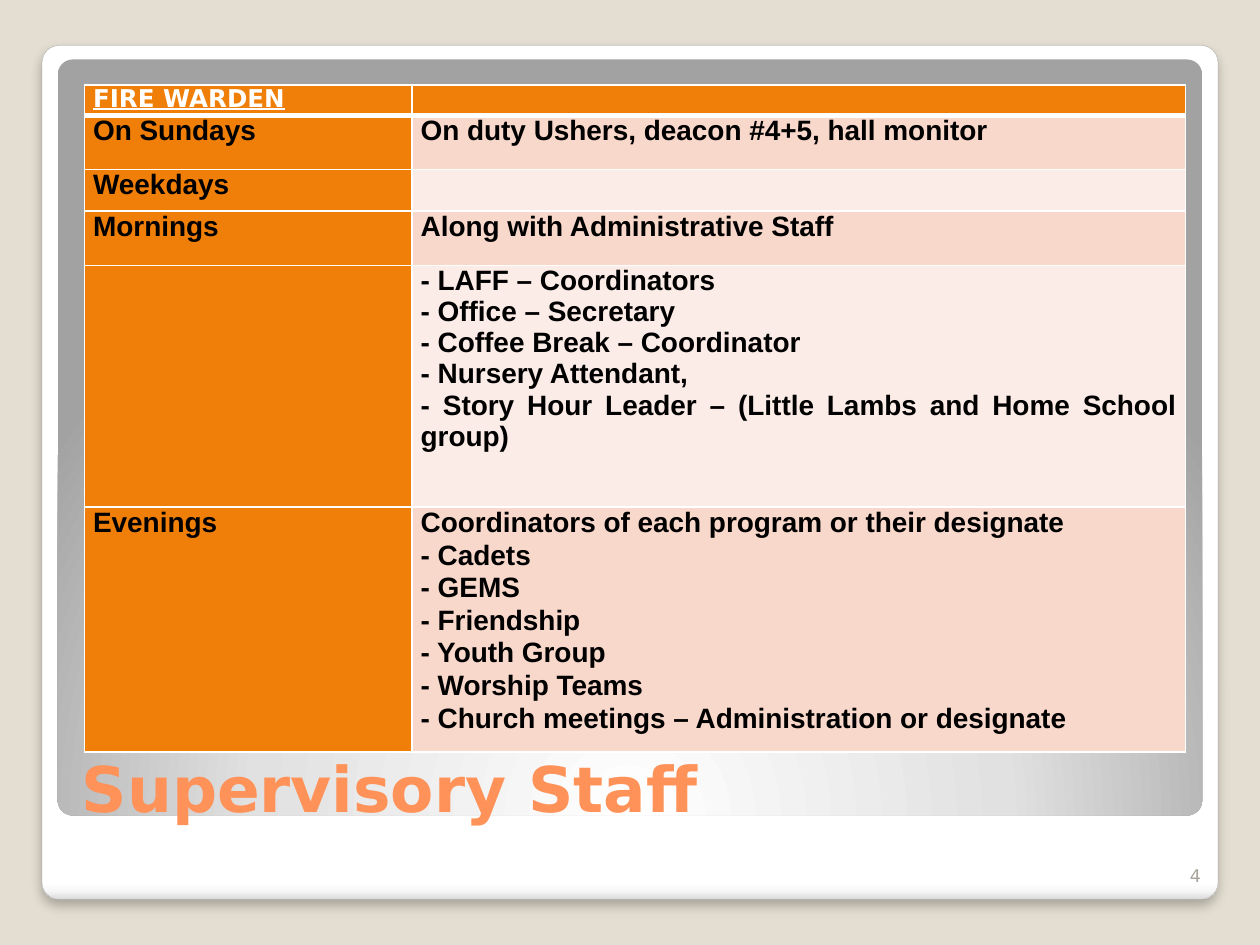
import pptx
import pptx.dml.color
import pptx.enum.shapes
import pptx.enum.text
import pptx.oxml
import pptx.oxml.ns
import pptx.util
from lxml import etree

Pt = pptx.util.Pt
RGBColor = pptx.dml.color.RGBColor
ALIGN = pptx.enum.text.PP_ALIGN
ANCHOR = pptx.enum.text.MSO_ANCHOR
NS = pptx.oxml.ns.nsdecls("a")

SAND = RGBColor(0xE3, 0xDE, 0xD1)
EDGE = RGBColor(0xA4, 0xA4, 0xA4)
CORAL = RGBColor(0xFF, 0x92, 0x58)
MUTED = RGBColor(0xA8, 0xA4, 0x9B)
ORANGE = RGBColor(0xF0, 0x7F, 0x09)
PINK = RGBColor(0xF9, 0xD8, 0xCC)
PALE_PINK = RGBColor(0xFC, 0xEC, 0xE7)
WHITE = RGBColor(0xFF, 0xFF, 0xFF)
BLACK = RGBColor(0, 0, 0)


def add_panel(left, top, width, height, stops, direction):
    """Add a rounded panel with a gradient; direction is its a:lin or a:path XML."""
    panel = slide.shapes.add_shape(
        pptx.enum.shapes.MSO_SHAPE.ROUNDED_RECTANGLE,
        Pt(left), Pt(top), Pt(width), Pt(height))
    panel.adjustments[0] = 0.02
    panel.shadow.inherit = False
    stop_xml = "".join(
        f'<a:gs pos="{position * 1000}"><a:srgbClr val="{color}"/></a:gs>'
        for position, color in stops)
    gradient = pptx.oxml.parse_xml(
        f'<a:gradFill {NS} rotWithShape="1"><a:gsLst>{stop_xml}</a:gsLst>{direction}</a:gradFill>')
    panel.element.spPr.find(pptx.oxml.ns.qn("a:prstGeom")).addnext(gradient)
    panel.line.fill.background()
    return panel


def add_text(paragraph, text, size, font, color, bold=False):
    run = paragraph.add_run()
    run.text = text
    run.font.size = Pt(size)
    run.font.name = font
    run.font.color.rgb = color
    run.font.bold = bold
    return run


presentation = pptx.Presentation()
presentation.slide_width = Pt(720)
presentation.slide_height = Pt(540)
slide = presentation.slides.add_slide(presentation.slide_layouts[5])
slide.background.fill.solid()
slide.background.fill.fore_color.rgb = SAND

# Card and grey panel
card = add_panel(24, 26, 672, 488,
                 [(0, "FFFFFF"), (98, "FFFFFF"), (99, "F7F7F7"), (100, "DADADA")],
                 '<a:lin ang="5400000" scaled="0"/>')
card.line.color.rgb = EDGE
card.line.width = Pt(0.16)
card_effects = card.element.spPr.find(pptx.oxml.ns.qn("a:effectLst"))
card_effects.append(pptx.oxml.parse_xml(
    f'<a:outerShdw {NS} blurRad="{Pt(6)}" dist="{Pt(4)}" dir="5400000" algn="ctr" '
    'rotWithShape="0"><a:srgbClr val="000000"><a:alpha val="25000"/></a:srgbClr></a:outerShdw>'))
add_panel(33, 34, 654, 432,
          [(0, "FFFFFF"), (55, "E1E1E1"), (100, "A2A2A2")],
          '<a:path path="circle"><a:fillToRect l="50000" t="175000" r="50000" b="-75000"/></a:path>')

# Title, brought in front of the panels
title = slide.shapes.title
slide.shapes.element.append(title.element)
title.left, title.top, title.width, title.height = Pt(39.6), Pt(392.4), Pt(644.4), Pt(82.8)
title.text_frame.vertical_anchor = ANCHOR.BOTTOM
title.text_frame.paragraphs[0].alignment = ALIGN.LEFT
add_text(title.text_frame.paragraphs[0], "Supervisory Staff", 36, "DejaVu Sans", CORAL, True)

# Page number
page_number = slide.shapes.add_textbox(Pt(657.4), Pt(481), Pt(36), Pt(28.8)).text_frame
page_number.word_wrap = True
page_number.vertical_anchor = ANCHOR.BOTTOM
page_number.paragraphs[0].alignment = ALIGN.RIGHT
add_text(page_number.paragraphs[0], "4", 10, "DejaVu Sans", MUTED)

# Duty table: row height and the lines of each of the two cells
duties = [
    (17.3, ["FIRE WARDEN"], []),
    (31, ["On Sundays"], ["On duty Ushers, deacon #4+5, hall monitor"]),
    (23.8, ["Weekdays"], []),
    (31, ["Mornings"], ["Along with Administrative Staff"]),
    (138.2, [], ["- LAFF – Coordinators", "- Office – Secretary",
                 "- Coffee Break – Coordinator", "- Nursery Attendant,",
                 "- Story Hour Leader – (Little Lambs and Home School group)"]),
    (138.2, ["Evenings"], ["Coordinators of each program or their designate",
                           "- Cadets", "- GEMS", "- Friendship", "- Youth Group",
                           "- Worship Teams",
                           "- Church meetings – Administration or designate"]),
]
table = slide.shapes.add_table(len(duties), 2, Pt(48.2), Pt(48.6), Pt(629.3), Pt(379.5)).table
table.columns[0].width = Pt(187.2)
table.columns[1].width = Pt(442.1)

for row, (height, *row_cells) in enumerate(duties):
    table.rows[row].height = Pt(height)
    header = row == 0
    for column, lines in enumerate(row_cells):
        cell = table.cell(row, column)
        cell.margin_left = cell.margin_right = Pt(5.04)
        cell.margin_top = cell.margin_bottom = 0
        for side in "LRTB":
            thick = (header and side == "B") or (row == 1 and side == "T")
            cell._tc.get_or_add_tcPr().append(pptx.oxml.parse_xml(
                f'<a:ln{side} {NS} w="{Pt(3 if thick else 1)}"><a:solidFill>'
                f'<a:srgbClr val="{WHITE}"/></a:solidFill></a:ln{side}>'))
        cell.fill.solid()
        if header or column == 0:
            cell.fill.fore_color.rgb = ORANGE
        else:
            cell.fill.fore_color.rgb = PINK if row % 2 else PALE_PINK
        if not lines:
            # Keeps the empty cell from stretching its row
            etree.SubElement(cell.text_frame.paragraphs[0]._p,
                             pptx.oxml.ns.qn("a:endParaRPr"), sz="1000")
        for index, line in enumerate(lines):
            frame = cell.text_frame
            paragraph = frame.add_paragraph() if index else frame.paragraphs[0]
            if row == 5 and index:
                paragraph.line_spacing = 1.05
            else:
                paragraph.alignment = ALIGN.JUSTIFY
            if header:
                add_text(paragraph, line, 14, "DejaVu Sans", WHITE, True).font.underline = True
            else:
                add_text(paragraph, line, 16, "Arial", BLACK, True)

presentation.save("out.pptx")
